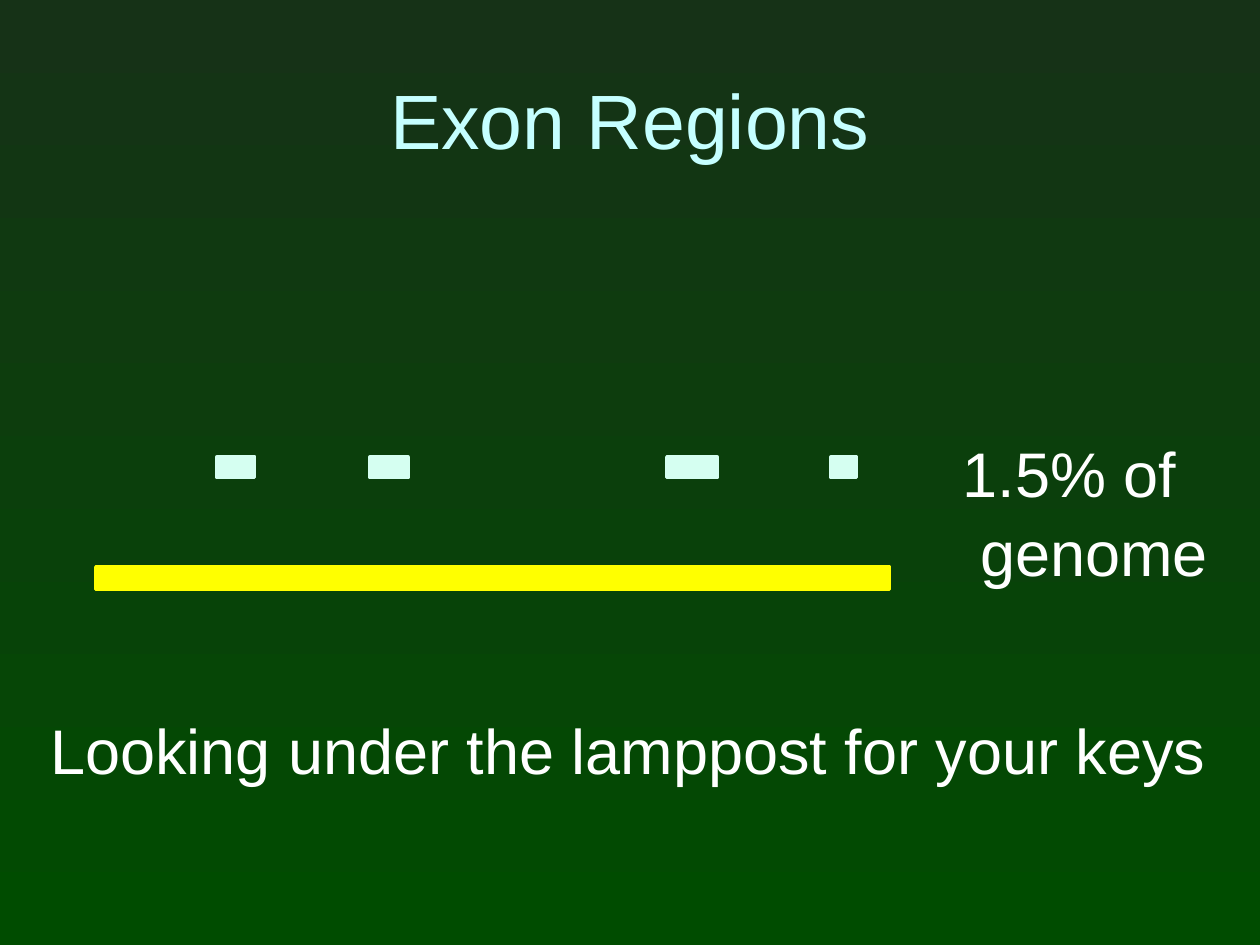
import pptx
import pptx.util
import pptx.dml.color
import pptx.enum.shapes
import pptx.enum.text

Pt = pptx.util.Pt
RGB = pptx.dml.color.RGBColor
ALIGN = pptx.enum.text.PP_ALIGN
ANCHOR = pptx.enum.text.MSO_ANCHOR

DARK = RGB(0x16, 0x32, 0x17)
GREEN = RGB(0x00, 0x4C, 0x00)
YELLOW = RGB(0xFF, 0xFF, 0x00)
MINT = RGB(0xD5, 0xFF, 0xF1)
CYAN = RGB(0xC5, 0xFF, 0xFF)
WHITE = RGB(0xFF, 0xFF, 0xFF)

EXONS = [(124, 21.6), (211.5, 21.6), (381, 28.8), (475, 14.4)]  # left, width


def paint(slide):
    """Fill the background with a gradient from top to bottom."""
    fill = slide.background.fill
    fill.gradient()
    fill.gradient_angle = 270
    for stop, color in zip(fill.gradient_stops, (DARK, GREEN)):
        stop.color.rgb = color


def add_bar(slide, left, top, width, height, color):
    bar = slide.shapes.add_shape(
        pptx.enum.shapes.MSO_SHAPE.RECTANGLE,
        Pt(left), Pt(top), Pt(width), Pt(height))
    bar.shadow.inherit = False
    bar.fill.solid()
    bar.fill.fore_color.rgb = color
    bar.line.color.rgb = color
    bar.line.width = Pt(2)


def add_text(slide, lines, left, top, width, height, size=36, color=WHITE,
             align=ALIGN.LEFT, anchor=ANCHOR.TOP, wrap=False):
    box = slide.shapes.add_textbox(Pt(left), Pt(top), Pt(width), Pt(height))
    frame = box.text_frame
    frame.word_wrap = wrap
    frame.vertical_anchor = anchor
    frame.text = "\n".join(lines)
    for para in frame.paragraphs:
        para.alignment = align
        para.line_spacing = 1.05
        para.font.name = "Arial"
        para.font.size = Pt(size)
        para.font.color.rgb = color


def main():
    deck = pptx.Presentation()
    deck.slide_width, deck.slide_height = Pt(720), Pt(540)
    slide = deck.slides.add_slide(deck.slide_layouts[6])
    paint(slide)
    add_bar(slide, 54.7, 324, 453.6, 13, YELLOW)
    for left, width in EXONS:
        add_bar(slide, left, 261, width, 12, MINT)
    add_text(slide, ["1.5% of", " genome"], 543, 242.6, 156, 94.3)
    add_text(slide, ["Looking under the lamppost for your keys"],
             21.6, 401, 681, 51)
    add_text(slide, ["Exon Regions"], 36, 21.6, 648, 90, 44, CYAN,
             ALIGN.CENTER, ANCHOR.MIDDLE, True)
    deck.save("out.pptx")


if __name__ == "__main__":
    main()
